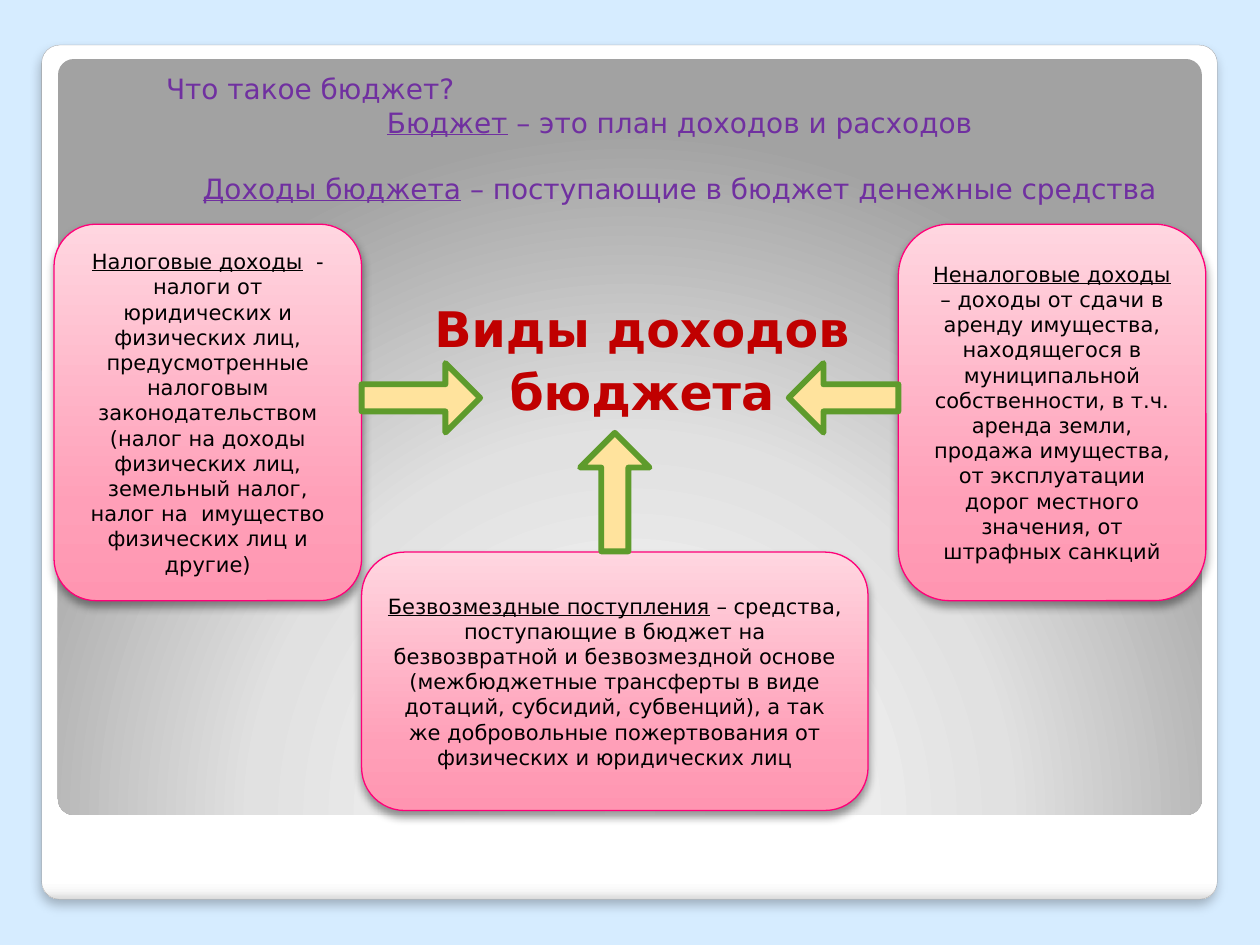
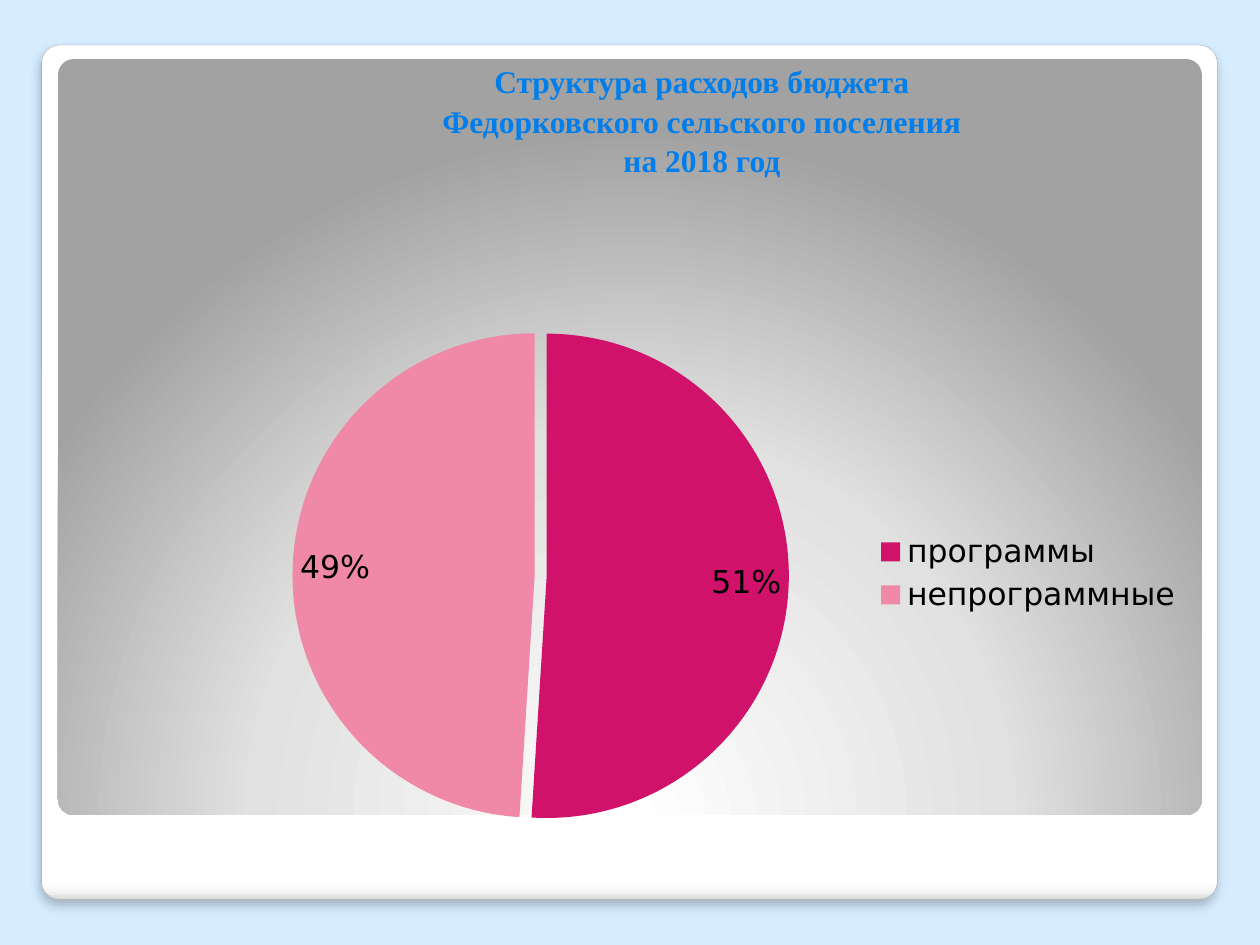
from pptx import Presentation
from pptx.chart.data import CategoryChartData
from pptx.dml.color import RGBColor
from pptx.enum.chart import XL_CHART_TYPE as ChartType
from pptx.enum.chart import XL_LABEL_POSITION as LabelPosition
from pptx.enum.chart import XL_LEGEND_POSITION as LegendPosition
from pptx.enum.shapes import MSO_SHAPE as Shape
from pptx.enum.text import MSO_ANCHOR as Anchor
from pptx.enum.text import MSO_AUTO_SIZE as AutoSize
from pptx.enum.text import PP_ALIGN as Align
from pptx.oxml import parse_xml
from pptx.oxml.ns import nsdecls, qn
from pptx.util import Cm, Pt

SKY = RGBColor(0xD6, 0xEC, 0xFF)
WHITE = RGBColor(0xFF, 0xFF, 0xFF)
CARD_FOOT = RGBColor(0xF7, 0xF7, 0xF7)
CARD_EDGE = RGBColor(0xDA, 0xDA, 0xDA)
CARD_LINE = RGBColor(0xA4, 0xA4, 0xA4)
SILVER = RGBColor(0xE1, 0xE1, 0xE1)
GREY = RGBColor(0xA2, 0xA2, 0xA2)
BLACK = RGBColor(0x00, 0x00, 0x00)
PINK = RGBColor(0xFF, 0x95, 0xB1)
PINK_MIDDLE = RGBColor(0xFF, 0x9F, 0xB8)
PINK_LIGHT = RGBColor(0xFF, 0xD6, 0xE0)
MAGENTA = RGBColor(0xFF, 0x00, 0x79)
PURPLE = RGBColor(0x70, 0x30, 0xA0)
RED = RGBColor(0xC0, 0x00, 0x00)
BLUE = RGBColor(0x00, 0x7E, 0xEB)
SAND = RGBColor(0xFF, 0xE3, 0x9D)
GREEN = RGBColor(0x5E, 0x9B, 0x2C)
SLICE_DARK = RGBColor(0xD1, 0x12, 0x6B)
SLICE_LIGHT = RGBColor(0xF0, 0x88, 0xA7)

SANS = "DejaVu Sans"
SERIF = "Times New Roman"


def add_panel(slide, place, corner, stops, direction, shadow=None):
    """Add a rounded gradient panel; shadow is (opacity %, blur pt, distance pt)."""
    panel = slide.shapes.add_shape(Shape.ROUNDED_RECTANGLE, *[Cm(n) for n in place])
    panel.adjustments[0] = corner
    panel.line.fill.background()
    panel.fill.gradient()
    plain = panel.element.spPr.find(qn("a:gradFill"))
    stop_xml = "".join(
        f'<a:gs pos="{percent * 1000}"><a:srgbClr val="{color}"/></a:gs>'
        for percent, color in stops)
    plain.getparent().replace(plain, parse_xml(
        f'<a:gradFill {nsdecls("a")} rotWithShape="1">'
        f'<a:gsLst>{stop_xml}</a:gsLst>{direction}</a:gradFill>'))
    panel.shadow.inherit = False
    if shadow:
        opacity, blur, distance = shadow
        panel.element.spPr.find(qn("a:effectLst")).append(parse_xml(
            f'<a:outerShdw {nsdecls("a")} blurRad="{Pt(blur)}" dist="{Pt(distance)}" '
            f'dir="5400000" rotWithShape="0"><a:srgbClr val="{BLACK}">'
            f'<a:alpha val="{opacity * 1000}"/></a:srgbClr></a:outerShdw>'))
    return panel


def add_span(para, text, size, color, font=SANS, bold=False, underline=False):
    span = para.add_run()
    span.text = text
    span.font.name = font
    span.font.size = Pt(size)
    span.font.color.rgb = color
    span.font.bold = bold
    span.font.underline = underline


deck = Presentation()
deck.slide_width, deck.slide_height = Cm(25.4), Cm(19.05)
income_slide = deck.slides.add_slide(deck.slide_layouts[1])
spending_slide = deck.slides.add_slide(deck.slide_layouts[5])

# Shared background, kept on the slide master
master = deck.slide_master
master.background.fill.solid()
master.background.fill.fore_color.rgb = SKY
card = add_panel(
    income_slide, (0.84, 0.91, 23.7, 17.22), 0.021,
    [(0, WHITE), (98, WHITE), (99, CARD_FOOT), (100, CARD_EDGE)],
    '<a:lin ang="5400000" scaled="0"/>', shadow=(25, 6, 4))
card.line.color.rgb = CARD_LINE
card.line.width = Pt(0.16)
stage = add_panel(
    income_slide, (1.17, 1.19, 23.06, 15.24), 0.021,
    [(0, WHITE), (55, SILVER), (100, GREY)],
    '<a:path path="circle"><a:fillToRect l="50000" t="175000" r="50000" b="-75000"/></a:path>')
for order, panel in enumerate((card, stage)):
    panel.element.nvSpPr.cNvPr.set("id", str(20 + order))
    master.element.cSld.spTree.insert(2 + order, panel.element)

# Slide 1: kinds of budget income
heading = income_slide.shapes.title
heading.element.getparent().remove(heading.element)
body = income_slide.placeholders[1]
body.left, body.top, body.width, body.height = Cm(0.71), Cm(4.52), Cm(24.21), Cm(5.59)
frame = body.text_frame
frame.auto_size = AutoSize.NONE
frame.margin_left, frame.margin_top = Cm(0.5), Cm(1.5)
for number, line in enumerate(("Виды доходов", "бюджета")):
    para = frame.add_paragraph() if number else frame.paragraphs[0]
    para.alignment = Align.CENTER
    para.space_before = Pt(2.5)
    properties = para._p.get_or_add_pPr()
    properties.set("marL", "0")
    properties.set("indent", "0")
    properties.append(parse_xml(f'<a:buNone {nsdecls("a")}/>'))
    add_span(para, line, 28, RED, bold=True)

definitions = income_slide.shapes.add_textbox(Cm(3.1), Cm(1.32), Cm(21.21), Cm(3))
frame = definitions.text_frame
frame.word_wrap = True
add_span(frame.paragraphs[0], "Что такое бюджет?", 16, PURPLE)
for term, meaning, gap in (
        ("Бюджет", " – это план доходов и расходов", 0),
        ("Доходы бюджета", " – поступающие в бюджет денежные средства", 18.6)):
    para = frame.add_paragraph()
    para.alignment = Align.CENTER
    para.space_before = Pt(gap)
    add_span(para, term, 16, PURPLE, underline=True)
    add_span(para, meaning, 16, PURPLE)

incomes = (
    ((18.11, 4.52, 6.2, 7.59), 0.167, "Неналоговые доходы",
     " – доходы от сдачи в аренду имущества, находящегося в муниципальной "
     "собственности, в т.ч. аренда земли, продажа имущества, от эксплуатации "
     "дорог местного значения, от штрафных санкций"),
    ((1.09, 4.52, 6.2, 7.59), 0.136, "Налоговые доходы",
     "  - налоги от юридических и физических лиц, предусмотренные налоговым "
     "законодательством (налог на доходы физических лиц, земельный налог, "
     "налог на  имущество физических лиц и другие)"),
    ((7.29, 11.13, 10.21, 5.21), 0.167, "Безвозмездные поступления",
     " – средства, поступающие в бюджет на безвозвратной и безвозмездной основе "
     "(межбюджетные трансферты в виде дотаций, субсидий, субвенций), а так же "
     "добровольные пожертвования от физических и юридических лиц"),
)
for place, corner, term, meaning in incomes:
    box = add_panel(
        income_slide, place, corner,
        [(0, PINK), (25, PINK_MIDDLE), (100, PINK_LIGHT)],
        '<a:lin ang="16200000" scaled="0"/>', shadow=(40, 5.2, 3))
    box.line.color.rgb = MAGENTA
    box.line.width = Pt(0.75)
    frame = box.text_frame
    frame.word_wrap = True
    frame.vertical_anchor = Anchor.MIDDLE
    para = frame.paragraphs[0]
    para.alignment = Align.CENTER
    add_span(para, term, 12, BLACK, underline=True)
    add_span(para, meaning, 12, BLACK)

for left, top, width, turn in (
        (15.9, 7.32, 2.21, 180), (7.29, 7.32, 2.39, 0), (11.2, 9.22, 2.39, 270)):
    arrow = income_slide.shapes.add_shape(
        Shape.RIGHT_ARROW, Cm(left), Cm(top), Cm(width), Cm(1.4))
    arrow.adjustments[0], arrow.adjustments[1] = 0.39, 0.5
    arrow.rotation = turn
    arrow.fill.solid()
    arrow.fill.fore_color.rgb = SAND
    arrow.line.color.rgb = GREEN
    arrow.line.width = Pt(3.35)
    arrow.shadow.inherit = False

# Slide 2: structure of spending
title = spending_slide.shapes.title
title.left, title.top, title.width, title.height = Cm(4.04), Cm(1.15), Cm(20.22), Cm(2.59)
frame = title.text_frame
frame.auto_size = AutoSize.NONE
frame.vertical_anchor = Anchor.BOTTOM
para = frame.paragraphs[0]
para.alignment = Align.CENTER
para.line_spacing = 1.05
for number, line in enumerate((
        "Структура расходов бюджета", "Федорковского сельского поселения", "на 2018 год")):
    if number:
        para.add_line_break()
    add_span(para, line, 18, BLUE, font=SERIF, bold=True)

spending = CategoryChartData(number_format="0%")
spending.categories = ["программы", "непрограммные"]
spending.add_series("Series 1", (0.51, 0.49))
chart = spending_slide.shapes.add_chart(
    ChartType.PIE, Cm(3.1), Cm(5.54), Cm(21.01), Cm(12.04), spending).chart
chart.has_title = False
chart.font.name = SANS
chart.font.size = Pt(18)
chart.font.color.rgb = BLACK
chart.has_legend = True
chart.legend.position = LegendPosition.RIGHT
chart.legend.include_in_layout = False

plot = chart.plots[0]
plot.vary_by_categories = True
plot.has_data_labels = True
labels = plot.data_labels
labels.show_value = True
labels.show_percentage = False
labels.number_format = "0%"
labels.number_format_is_linked = False
labels.position = LabelPosition.INSIDE_END
for number, color in enumerate((SLICE_DARK, SLICE_LIGHT)):
    fill = plot.series[0].points[number].format.fill
    fill.solid()
    fill.fore_color.rgb = color

first_point = plot.series[0]._element.find(qn("c:dPt"))
first_point.find(qn("c:spPr")).addprevious(
    parse_xml(f'<c:explosion {nsdecls("c")} val="5"/>'))
plot_area = chart._chartSpace.chart.plotArea
for old_layout in plot_area.findall(qn("c:layout")):
    plot_area.remove(old_layout)
plot_area.insert(0, parse_xml(
    f'<c:layout {nsdecls("c")}><c:manualLayout><c:layoutTarget val="inner"/>'
    '<c:xMode val="edge"/><c:yMode val="edge"/><c:x val="0.133"/><c:y val="0.098"/>'
    '<c:w val="0.465"/><c:h val="0.811"/></c:manualLayout></c:layout>'))

deck.save("out.pptx")
